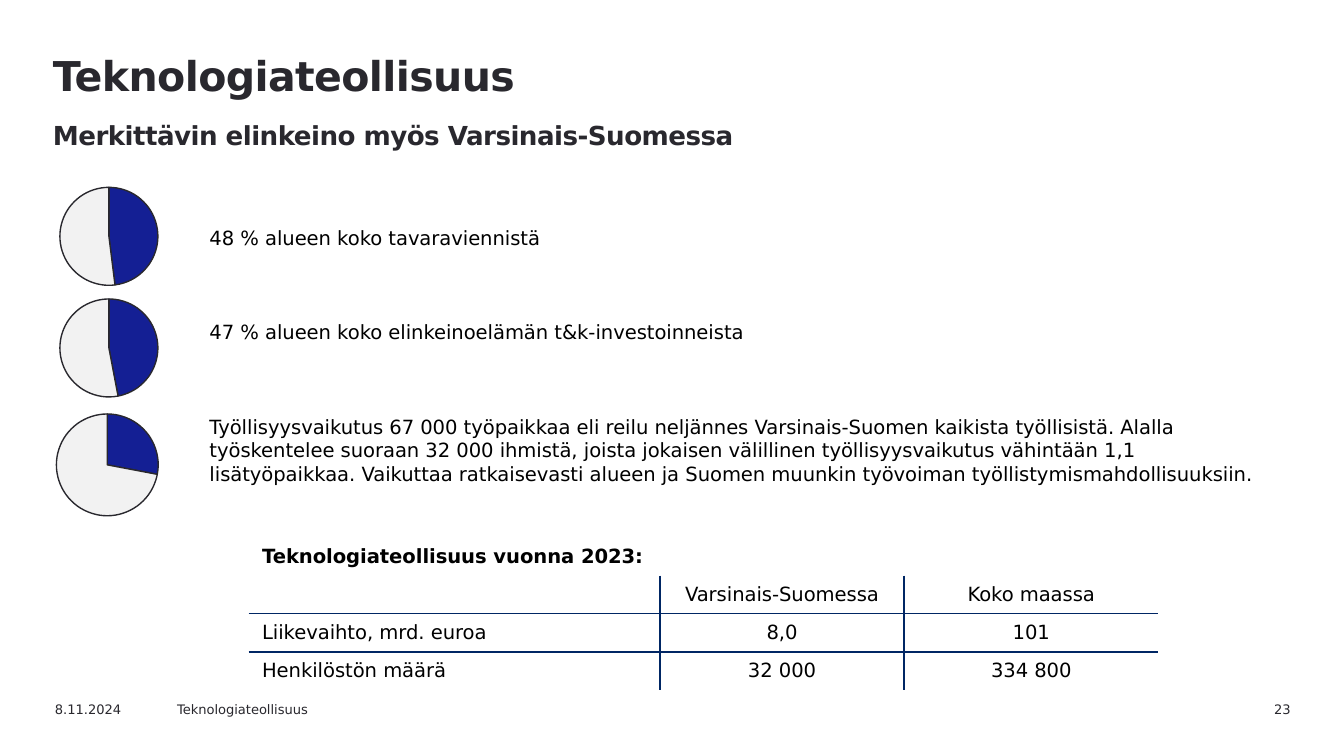
"""Build a slide on the technology industry in Varsinais-Suomi."""
from dataclasses import dataclass

import lxml.etree
import pptx
import pptx.chart.data
import pptx.dml.color
import pptx.enum.chart
import pptx.enum.text
import pptx.oxml
import pptx.oxml.ns
import pptx.util

Cm, Pt = pptx.util.Cm, pptx.util.Pt
qn = pptx.oxml.ns.qn
ALIGN = pptx.enum.text.PP_ALIGN


@dataclass(frozen=True)
class Theme:
    font: str = "DejaVu Sans"
    ink: str = "29282E"
    body: str = "000000"
    share: str = "141F94"
    rest: str = "F2F2F2"
    rule: str = "002664"
    title_size: float = 22
    subtitle_size: float = 14
    body_size: float = 10.5
    footer_size: float = 7


THEME = Theme()

HEADLINES = [
    ("Teknologiateollisuus", THEME.title_size),
    ("Merkittävin elinkeino myös Varsinais-Suomessa", THEME.subtitle_size),
]
STATEMENTS = [
    "48 % alueen koko tavaraviennistä",
    "47 % alueen koko elinkeinoelämän t&k-investoinneista",
    "Työllisyysvaikutus 67 000 työpaikkaa eli reilu neljännes Varsinais-Suomen "
    "kaikista työllisistä. Alalla työskentelee suoraan 32 000 ihmistä, joista "
    "jokaisen välillinen työllisyysvaikutus vähintään 1,1 lisätyöpaikkaa. "
    "Vaikuttaa ratkaisevasti alueen ja Suomen muunkin työvoiman "
    "työllistymismahdollisuuksiin.",
]
SHARES = [  # percentage, left, top, side
    (48, 0.79, 3.2, 2.54),
    (47, 0.79, 5.31, 2.54),
    (28, 0.71, 7.47, 2.64),
]
FIGURES = [
    ["Teknologiateollisuus vuonna 2023:", "", ""],
    ["", "Varsinais-Suomessa", "Koko maassa"],
    ["Liikevaihto, mrd. euroa", "8,0", "101"],
    ["Henkilöstön määrä", "32 000", "334 800"],
]
FIGURE_WIDTHS = [7.77, 4.62, 4.8]
ROW_HEIGHT = 0.72
FOOTERS = [
    ("8.11.2024", 0.79, 2.54, ALIGN.LEFT),
    ("Teknologiateollisuus", 3.1, 3.61, ALIGN.LEFT),
    ("23", 22.25, 2.39, ALIGN.RIGHT),
]
PIE_PORTION = 0.73
PLAIN_TABLE = "{2D5ABB26-0587-4C30-8999-92F81FD0307C}"


def rgb(value):
    return pptx.dml.color.RGBColor.from_string(value)


def style(font, size, color, bold=False):
    font.name, font.size, font.bold = THEME.font, Pt(size), bold
    font.color.rgb = rgb(color)


def add_frame(slide, left, top, width, height):
    frame = slide.shapes.add_textbox(Cm(left), Cm(top), Cm(width), Cm(height)).text_frame
    frame.word_wrap = True
    return frame


def add_headlines(slide):
    heading = add_frame(slide, 0.75, 0.81, 22.2, 1.8).paragraphs[0]
    heading.line_spacing = Pt(27)
    for index, (wording, size) in enumerate(HEADLINES):
        if index:
            heading.add_line_break()
        headline = heading.add_run()
        headline.text = wording
        style(headline.font, size, THEME.ink, bold=True)
        headline.font._element.set("spc", "-30")


def add_statements(slide):
    frame = add_frame(slide, 3.71, 4.14, 20.8, 6.15)
    for index, wording in enumerate(STATEMENTS):
        statement = frame.add_paragraph() if index else frame.paragraphs[0]
        statement.text = wording
        if index:
            statement.space_before = Pt(38)
        style(statement.font, THEME.body_size, THEME.body)


def add_share(slide, percentage, left, top, side):
    data = pptx.chart.data.CategoryChartData()
    data.categories = ["1", "2"]
    data.add_series("Series 1", [percentage, 100 - percentage])
    pie = slide.shapes.add_chart(
        pptx.enum.chart.XL_CHART_TYPE.PIE, Cm(left), Cm(top), Cm(side), Cm(side), data
    ).chart
    pie.has_legend = pie.has_title = False
    style(pie.font, 18, THEME.ink)
    for index, color in enumerate([THEME.share, THEME.rest]):
        slice_format = pie.plots[0].series[0].points[index].format
        slice_format.fill.solid()
        slice_format.fill.fore_color.rgb = rgb(color)
        slice_format.line.color.rgb = rgb(THEME.ink)
        slice_format.line.width = Pt(0.75)

    area = pie._chartSpace.chart.plotArea
    for old_layout in area.findall(qn("c:layout")):
        area.remove(old_layout)
    layout = lxml.etree.Element(qn("c:layout"))
    area.insert(0, layout)
    manual = lxml.etree.SubElement(layout, qn("c:manualLayout"))
    margin = (1 - PIE_PORTION) / 2
    for tag, value in [
        ("layoutTarget", "inner"), ("xMode", "edge"), ("yMode", "edge"),
        ("x", margin), ("y", margin), ("w", PIE_PORTION), ("h", PIE_PORTION),
    ]:
        lxml.etree.SubElement(manual, qn(f"c:{tag}"), val=str(value))


def add_border(cell, side):
    line = lxml.etree.SubElement(
        cell._tc.get_or_add_tcPr(), qn(f"a:ln{side}"), w=str(Pt(1))
    )
    fill = lxml.etree.SubElement(line, qn("a:solidFill"))
    lxml.etree.SubElement(fill, qn("a:srgbClr"), val=THEME.rule)


def add_figures(slide):
    rows, columns = len(FIGURES), len(FIGURE_WIDTHS)
    frame = slide.shapes.add_table(
        rows, columns, Cm(4.7), Cm(10.16), Cm(sum(FIGURE_WIDTHS)), Cm(rows * ROW_HEIGHT)
    )
    table = frame.table
    table.first_row = table.horz_banding = False
    table._tbl.tblPr.find(qn("a:tableStyleId")).text = PLAIN_TABLE
    for column, width in zip(table.columns, FIGURE_WIDTHS):
        column.width = Cm(width)
    for r, row in enumerate(FIGURES):
        table.rows[r].height = Cm(ROW_HEIGHT)
        for c, wording in enumerate(row):
            cell = table.cell(r, c)
            cell.vertical_anchor = pptx.enum.text.MSO_ANCHOR.MIDDLE
            inner_sides = {
                "L": c > 0, "R": c < columns - 1, "T": r > 1, "B": r < rows - 1,
            }
            for side, inner in inner_sides.items():
                if r and inner:
                    add_border(cell, side)
            cell.fill.background()
            cell.text = wording
            figure = cell.text_frame.paragraphs[0]
            figure.alignment = ALIGN.CENTER if c else ALIGN.LEFT
            style(figure.font, THEME.body_size, THEME.body, bold=r == 0)
            lxml.etree.SubElement(
                figure._p, qn("a:endParaRPr"), sz=str(int(THEME.body_size * 100))
            )
    table.cell(0, 0).merge(table.cell(0, columns - 1))


def add_footers(slide):
    for wording, left, width, alignment in FOOTERS:
        footer = add_frame(slide, left, 13.13, width, 0.46).paragraphs[0]
        footer.text, footer.alignment = wording, alignment
        style(footer.font, THEME.footer_size, THEME.ink)


def main():
    deck = pptx.Presentation()
    deck.slide_width, deck.slide_height = Cm(25.4), Cm(14.29)
    slide = deck.slides.add_slide(deck.slide_layouts[6])
    add_headlines(slide)
    add_statements(slide)
    for share in SHARES:
        add_share(slide, *share)
    add_figures(slide)
    add_footers(slide)
    deck.save("out.pptx")


if __name__ == "__main__":
    main()
